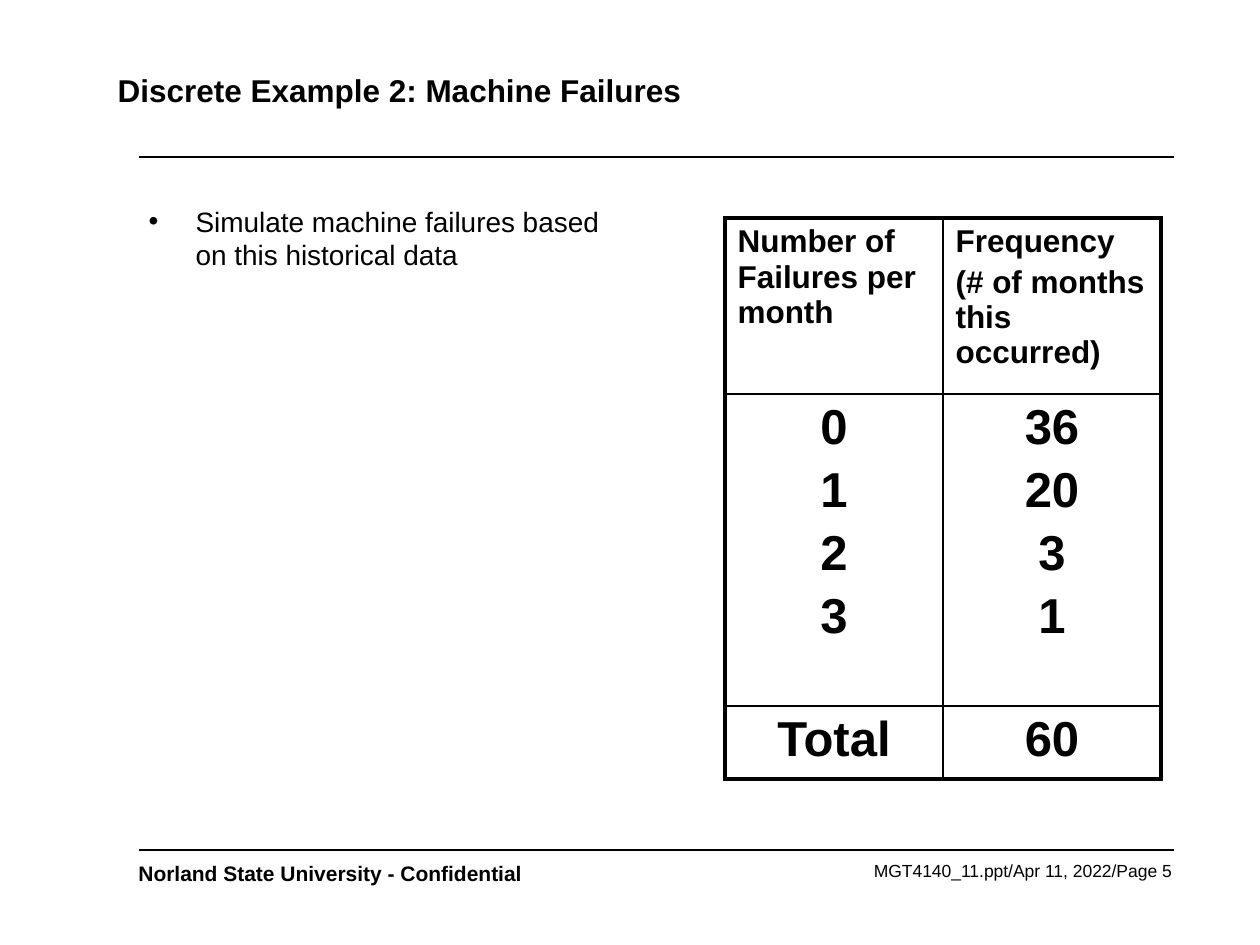
"""Build the slide on simulating machine failures from historical data."""
from dataclasses import dataclass

from lxml import etree
from pptx import Presentation
from pptx.dml.color import RGBColor
from pptx.enum.shapes import MSO_CONNECTOR
from pptx.enum.text import MSO_ANCHOR, MSO_AUTO_SIZE, PP_ALIGN
from pptx.oxml.ns import qn
from pptx.util import Emu, Pt

LEFT, CENTER, RIGHT = PP_ALIGN.LEFT, PP_ALIGN.CENTER, PP_ALIGN.RIGHT
TOP, MIDDLE = MSO_ANCHOR.TOP, MSO_ANCHOR.MIDDLE
NO_FIT = MSO_AUTO_SIZE.NONE
STRAIGHT = MSO_CONNECTOR.STRAIGHT
PX = 914400 / 126
COLORS = {"ink": "000000", "paper": "FFFFFF"}
OUTER, INNER = 2.25, 1


@dataclass(frozen=True)
class Box:
    left: int
    top: int
    width: int
    height: int


@dataclass(frozen=True)
class Style:
    size: int
    bold: bool = False
    align: PP_ALIGN = LEFT
    gap: float = 0


@dataclass(frozen=True)
class Footer:
    text: str
    box: Box
    style: Style


@dataclass(frozen=True)
class Row:
    height: int
    columns: tuple
    style: Style


HEADING = Style(18, True, LEFT, 3)
FIGURES = Style(28, True, CENTER, 4.7)
FOOTERS = (
    Footer("MGT4140_11.ppt/Apr 11, 2022/Page 5", Box(703, 854, 481, 33), Style(10, align=RIGHT)),
    Footer("Norland State University - Confidential", Box(126, 854, 484, 38), Style(12, True)),
)
RULE_TOPS = (157, 850)
ROWS = (
    Row(176, (["Number of Failures per month"], ["Frequency", "(# of months this occurred)"]), HEADING),
    Row(312, (["0", "1", "2", "3"], ["36", "20", "3", "1"]), FIGURES),
    Row(73, (["Total"], ["60"]), FIGURES),
)
TABLE_LEFT, TABLE_TOP, COLUMN_WIDTH = 725, 218, 218


def px(length: int) -> Emu:
    return Emu(round(length * PX))


def frame(box: Box) -> tuple:
    return px(box.left), px(box.top), px(box.width), px(box.height)


def color(name: str) -> RGBColor:
    return RGBColor.from_string(COLORS[name])


def write(text_frame, lines: list, style: Style) -> None:
    text_frame.text = "\n".join(lines)
    for index, paragraph in enumerate(text_frame.paragraphs):
        paragraph.alignment = style.align
        paragraph.space_before = Pt(style.gap if index else 0)
        for run in paragraph.runs:
            formats = {"name": "Arial", "size": Pt(style.size), "bold": style.bold}
            for attribute, value in formats.items():
                setattr(run.font, attribute, value)
            run.font.color.rgb = color("ink")


def fill_placeholder(holder, text: str, box: Box, style: Style, anchor: MSO_ANCHOR) -> None:
    holder.left, holder.top, holder.width, holder.height = frame(box)
    formats = {"auto_size": NO_FIT, "word_wrap": True, "vertical_anchor": anchor}
    for attribute, value in formats.items():
        setattr(holder.text_frame, attribute, value)
    write(holder.text_frame, [text], style)


def add_bullet(paragraph, indent: int) -> None:
    properties = paragraph._p.get_or_add_pPr()
    properties.set("marL", str(px(indent)))
    properties.set("indent", str(-px(indent)))
    etree.SubElement(properties, qn("a:buFont"), typeface="Arial")
    etree.SubElement(properties, qn("a:buChar"), char="•")


def add_rule(slide, top: int) -> None:
    rule = slide.shapes.add_connector(STRAIGHT, px(139), px(top), px(1174), px(top))
    rule.line.color.rgb = color("ink")
    rule.line.width = Pt(1)
    etree.SubElement(rule._element.spPr, qn("a:effectLst"))


def add_footer(slide, footer: Footer) -> None:
    box = slide.shapes.add_textbox(*frame(footer.box))
    box.text_frame.word_wrap = True
    write(box.text_frame, [footer.text], footer.style)


def add_border(cell, side: str, width: float) -> None:
    border = etree.SubElement(cell._tc.get_or_add_tcPr(), qn(f"a:ln{side}"), w=str(Pt(width)))
    solid = etree.SubElement(border, qn("a:solidFill"))
    etree.SubElement(solid, qn("a:srgbClr"), val=COLORS["ink"])


def add_failures(slide) -> None:
    box = Box(TABLE_LEFT, TABLE_TOP, 2 * COLUMN_WIDTH, sum(row.height for row in ROWS))
    failures = slide.shapes.add_table(len(ROWS), 2, *frame(box)).table
    failures.first_row = failures.horz_banding = False
    for column in failures.columns:
        column.width = px(COLUMN_WIDTH)
    for r, row in enumerate(ROWS):
        failures.rows[r].height = px(row.height)
        for c, lines in enumerate(row.columns):
            cell = failures.cell(r, c)
            write(cell.text_frame, lines, row.style)
            on_edge = {"L": c == 0, "R": c == 1, "T": r == 0, "B": r == len(ROWS) - 1}
            for side, outer in on_edge.items():
                add_border(cell, side, OUTER if outer else INNER)
            cell.fill.solid()
            cell.fill.fore_color.rgb = color("paper")


def main() -> None:
    deck = Presentation()
    deck.slide_width, deck.slide_height = px(1260), px(945)
    slide = deck.slides.add_slide(deck.slide_layouts[1])
    title, body = slide.placeholders
    for footer in FOOTERS:
        add_footer(slide, footer)
    for top in RULE_TOPS:
        add_rule(slide, top)
    fill_placeholder(title, "Discrete Example 2: Machine Failures",
                     Box(105, 32, 1071, 116), Style(18, True), MIDDLE)
    fill_placeholder(body, "Simulate machine failures based on this historical data",
                     Box(136, 198, 514, 642), Style(16), TOP)
    add_bullet(body.text_frame.paragraphs[0], 47)
    add_failures(slide)
    deck.save("out.pptx")


if __name__ == "__main__":
    main()
